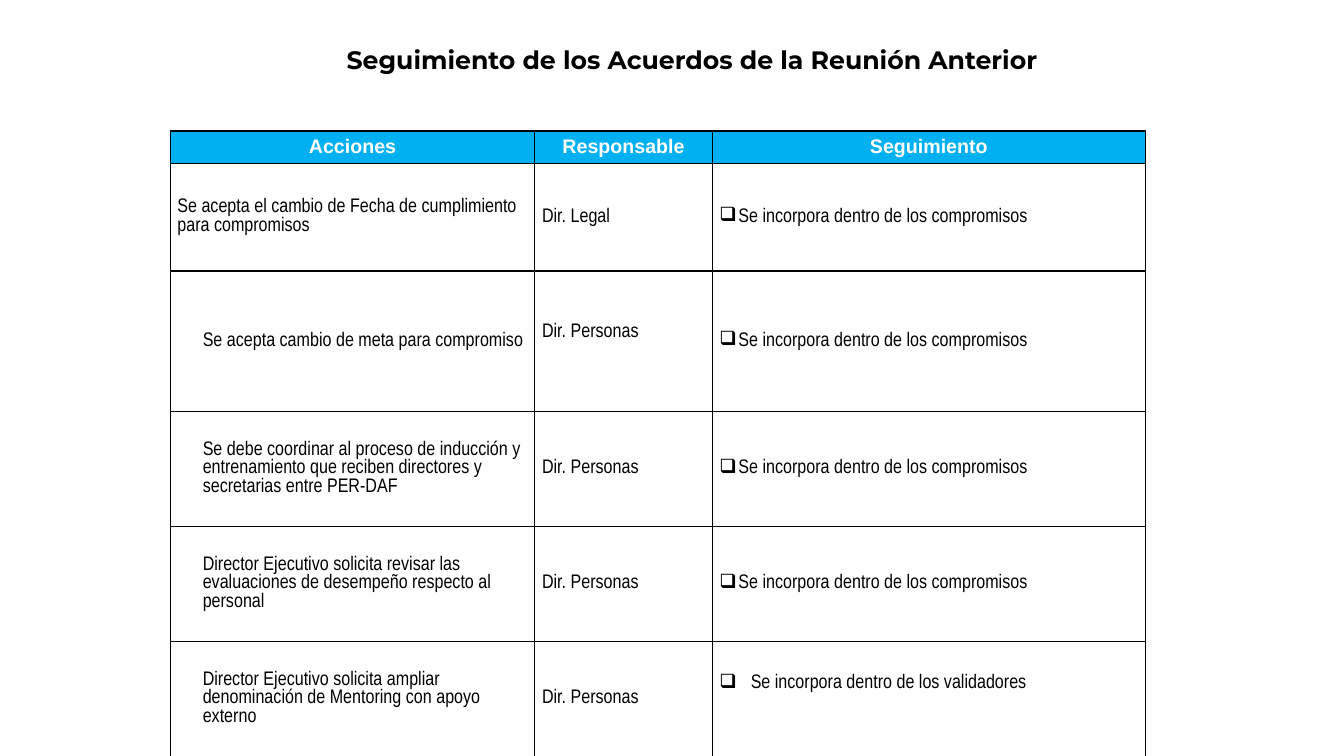
from lxml.etree import SubElement
from pptx import Presentation
from pptx.dml.color import RGBColor
from pptx.enum.text import MSO_ANCHOR, PP_ALIGN
from pptx.oxml.ns import qn
from pptx.util import Cm, Pt

COLORS = {"black": "000000", "white": "FFFFFF", "header": "00B0F0"}
HEADERS = ["Acciones", "Responsable", "Seguimiento"]
COMMITMENTS = "Se incorpora dentro de los compromisos"
AGREEMENTS = [
    ("Se acepta el cambio de Fecha de cumplimiento para compromisos", "Dir. Legal", COMMITMENTS),
    ("Se acepta cambio de meta para compromiso", "Dir. Personas", COMMITMENTS),
    ("Se debe coordinar al proceso de inducción y entrenamiento que reciben "
     "directores y secretarias entre PER-DAF", "Dir. Personas", COMMITMENTS),
    ("Director Ejecutivo solicita revisar las evaluaciones de desempeño respecto al personal",
     "Dir. Personas", COMMITMENTS),
    ("Director Ejecutivo solicita ampliar denominación de Mentoring con apoyo externo",
     "Dir. Personas", "Se incorpora dentro de los validadores"),
]
COLUMN_WIDTHS = [9.19, 4.47, 10.92]
ROW_HEIGHTS = [0.81, 2.72, 3.53, 2.9, 2.9, 2.9]
BOTTOM_MARGINS = {(2, 1): 0.46, (5, 2): 0.76}


def write_text(frame, text, font="Arial Narrow", size=14, color="black", bold=False,
               align=PP_ALIGN.LEFT, indent=0, bullet=None, space_after=0):
    frame.word_wrap = True
    para = frame.paragraphs[0]
    para.alignment = align
    para.space_after = Pt(space_after)
    properties = para._p.get_or_add_pPr()
    properties.set("marL", str(Cm(indent)))
    if bullet:
        properties.set("indent", str(-Cm(indent)))
        bullet_color = SubElement(properties, qn("a:buClr"))
        SubElement(bullet_color, qn("a:srgbClr"), val=COLORS["black"])
        SubElement(properties, qn("a:buChar"), char=bullet)
    span = para.add_run()
    span.text = text
    span.font.name = font
    span.font.size = Pt(size)
    span.font.bold = bold
    span.font.color.rgb = RGBColor.from_string(COLORS[color])


def add_title(page, text):
    box = page.shapes.add_textbox(Cm(7.14), Cm(0.46), Cm(20.6), Cm(2.06))
    box.text_frame.vertical_anchor = MSO_ANCHOR.MIDDLE
    write_text(box.text_frame, text, font="Montserrat", size=18, bold=True,
               align=PP_ALIGN.CENTER)


def style_cell(cell, fill, side_margin, bottom_margin=0):
    cell.vertical_anchor = MSO_ANCHOR.MIDDLE
    cell.margin_left = cell.margin_right = Cm(side_margin)
    cell.margin_top = 0
    cell.margin_bottom = Cm(bottom_margin)
    properties = cell._tc.get_or_add_tcPr()
    for side in ("lnL", "lnR", "lnT", "lnB"):
        border = SubElement(properties, qn(f"a:{side}"), w=str(Pt(1)))
        border_fill = SubElement(border, qn("a:solidFill"))
        SubElement(border_fill, qn("a:srgbClr"), val=COLORS["black"])
    cell.fill.solid()
    cell.fill.fore_color.rgb = RGBColor.from_string(COLORS[fill])


def text_format(row, column):
    if column == 0 and row > 1:
        return {"indent": 0.64}
    if column == 2:
        last = row == len(AGREEMENTS)
        return {"bullet": "❑", "indent": 0.79 if last else 0.48,
                "space_after": 0 if last else 6}
    return {}


def add_agreements_table(page):
    frame = page.shapes.add_table(len(ROW_HEIGHTS), len(COLUMN_WIDTHS), Cm(4.29), Cm(3.3),
                                  Cm(sum(COLUMN_WIDTHS)), Cm(sum(ROW_HEIGHTS)))
    table = frame.table
    table.horz_banding = False
    for column, width in zip(table.columns, COLUMN_WIDTHS):
        column.width = Cm(width)
    for row, height in zip(table.rows, ROW_HEIGHTS):
        row.height = Cm(height)
    for column, heading in enumerate(HEADERS):
        cell = table.cell(0, column)
        style_cell(cell, "header", 0.08)
        write_text(cell.text_frame, heading, font="Arial", color="white", bold=True,
                   align=PP_ALIGN.CENTER)
    for row, agreement in enumerate(AGREEMENTS, start=1):
        for column, text in enumerate(agreement):
            cell = table.cell(row, column)
            style_cell(cell, "white", 0.18, BOTTOM_MARGINS.get((row, column), 0))
            write_text(cell.text_frame, text, **text_format(row, column))


def main():
    deck = Presentation()
    deck.slide_width = Cm(33.87)
    deck.slide_height = Cm(19.05)
    page = deck.slides.add_slide(deck.slide_layouts[6])
    add_title(page, "Seguimiento de los Acuerdos de la Reunión Anterior")
    add_agreements_table(page)
    deck.save("out.pptx")


if __name__ == "__main__":
    main()
